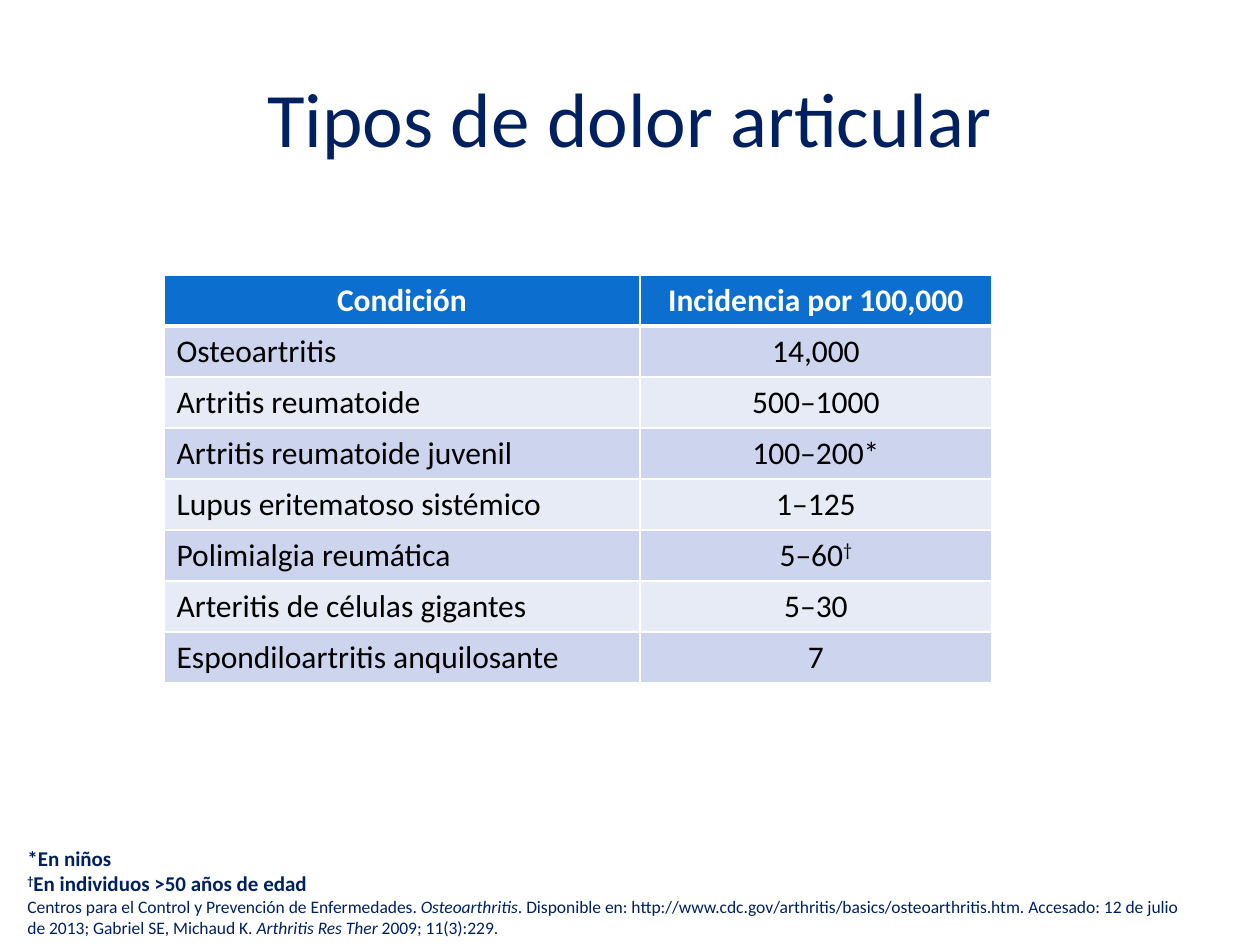
from lxml import etree
from pptx import Presentation
from pptx import util as u
from pptx.dml.color import RGBColor
from pptx.enum import text
from pptx.oxml import ns

COLORS = {"navy": "002060", "header": "0C6FCF", "odd": "CCD5ED",
          "even": "E7EBF6", "white": "FFFFFF", "black": "000000"}
FONT = "Calibri"
EMU_PER_PX = 914400 / 126

TITLE = "Tipos de dolor articular"
HEADINGS = ("Condición", "Incidencia por 100,000")
CONDITIONS = [
    ("Osteoartritis", "14,000"),
    ("Artritis reumatoide", "500–1000"),
    ("Artritis reumatoide juvenil", "100–200*"),
    ("Lupus eritematoso sistémico", "1–125"),
    ("Polimialgia reumática", "5–60†"),
    ("Arteritis de células gigantes", "5–30"),
    ("Espondiloartritis anquilosante", "7"),
]
NOTES = ("*En niños", "†En individuos >50 años de edad")
REFERENCES = [
    ("Centros para el Control y Prevención de Enfermedades. ", False),
    ("Osteoarthritis", True),
    (". Disponible en: http://www.cdc.gov/arthritis/basics/osteoarthritis.htm. "
     "Accesado: 12 de julio de 2013; Gabriel SE, Michaud K. ", False),
    ("Arthritis Res Ther", True),
    (" 2009; 11(3):229.", False),
]
TITLE_AREA = (63, 38, 1134, 158)
NOTES_AREA = (15, 839, 1181, 106)
TABLE_LEFT, TABLE_TOP = 164, 275
COLUMN_WIDTHS = (476, 352)
ROW_HEIGHT = 51


def px(length):
    return u.Emu(round(length * EMU_PER_PX))


def rgb(name):
    return RGBColor.from_string(COLORS[name])


def add_span(para, words, size, color, bold=False, italic=False):
    before, dagger, after = words.partition("†")
    for part in filter(None, (before, dagger, after)):
        span = para.add_run()
        span.text = part
        font = span.font
        font.name, font.size = FONT, u.Pt(size)
        font.bold, font.italic = bold, italic
        font.color.rgb = rgb(color)
        if part == "†":
            span._r.get_or_add_rPr().set("baseline", "30000")


def add_box(page, area, anchor):
    frame = page.shapes.add_textbox(*map(px, area)).text_frame
    frame.word_wrap = True
    frame.vertical_anchor = anchor
    return frame.paragraphs[0]


def set_borders(cell, bottom):
    properties = cell._tc.get_or_add_tcPr()
    for side, width in (("L", 1), ("R", 1), ("T", 1), ("B", bottom)):
        line = etree.SubElement(properties, ns.qn(f"a:ln{side}"), w=str(u.Pt(width)))
        fill = etree.SubElement(line, ns.qn("a:solidFill"))
        etree.SubElement(fill, ns.qn("a:srgbClr"), val=COLORS["white"])


def add_conditions(page):
    rows = [HEADINGS, *CONDITIONS]
    table = page.shapes.add_table(
        len(rows), len(HEADINGS), px(TABLE_LEFT), px(TABLE_TOP),
        px(sum(COLUMN_WIDTHS)), px(ROW_HEIGHT * len(rows))).table
    for column, width in zip(table.columns, COLUMN_WIDTHS):
        column.width = px(width)
    for r, row in enumerate(rows):
        heading = r == 0
        shade = "header" if heading else "odd" if r % 2 else "even"
        for c, words in enumerate(row):
            cell = table.cell(r, c)
            set_borders(cell, 3 if heading else 1)
            cell.fill.solid()
            cell.fill.fore_color.rgb = rgb(shade)
            cell.vertical_anchor = text.MSO_ANCHOR.MIDDLE
            para = cell.text_frame.paragraphs[0]
            centred = heading or c == 1
            para.alignment = text.PP_ALIGN.CENTER if centred else text.PP_ALIGN.LEFT
            add_span(para, words, 18, "white" if heading else "black", heading)


def add_notes(page):
    para = add_box(page, NOTES_AREA, text.MSO_ANCHOR.TOP)
    add_span(para, NOTES[0], 12, "navy", True)
    para.add_line_break()
    add_span(para, NOTES[1], 12, "navy", True)
    para = para._parent.add_paragraph()
    for words, italic in REFERENCES:
        add_span(para, words, 10, "navy", italic=italic)


def main():
    deck = Presentation()
    deck.slide_width, deck.slide_height = px(1260), px(945)
    page = deck.slides.add_slide(deck.slide_layouts[6])
    title = add_box(page, TITLE_AREA, text.MSO_ANCHOR.MIDDLE)
    title.alignment = text.PP_ALIGN.CENTER
    add_span(title, TITLE, 44, "navy")
    add_notes(page)
    add_conditions(page)
    deck.save("out.pptx")


if __name__ == "__main__":
    main()
